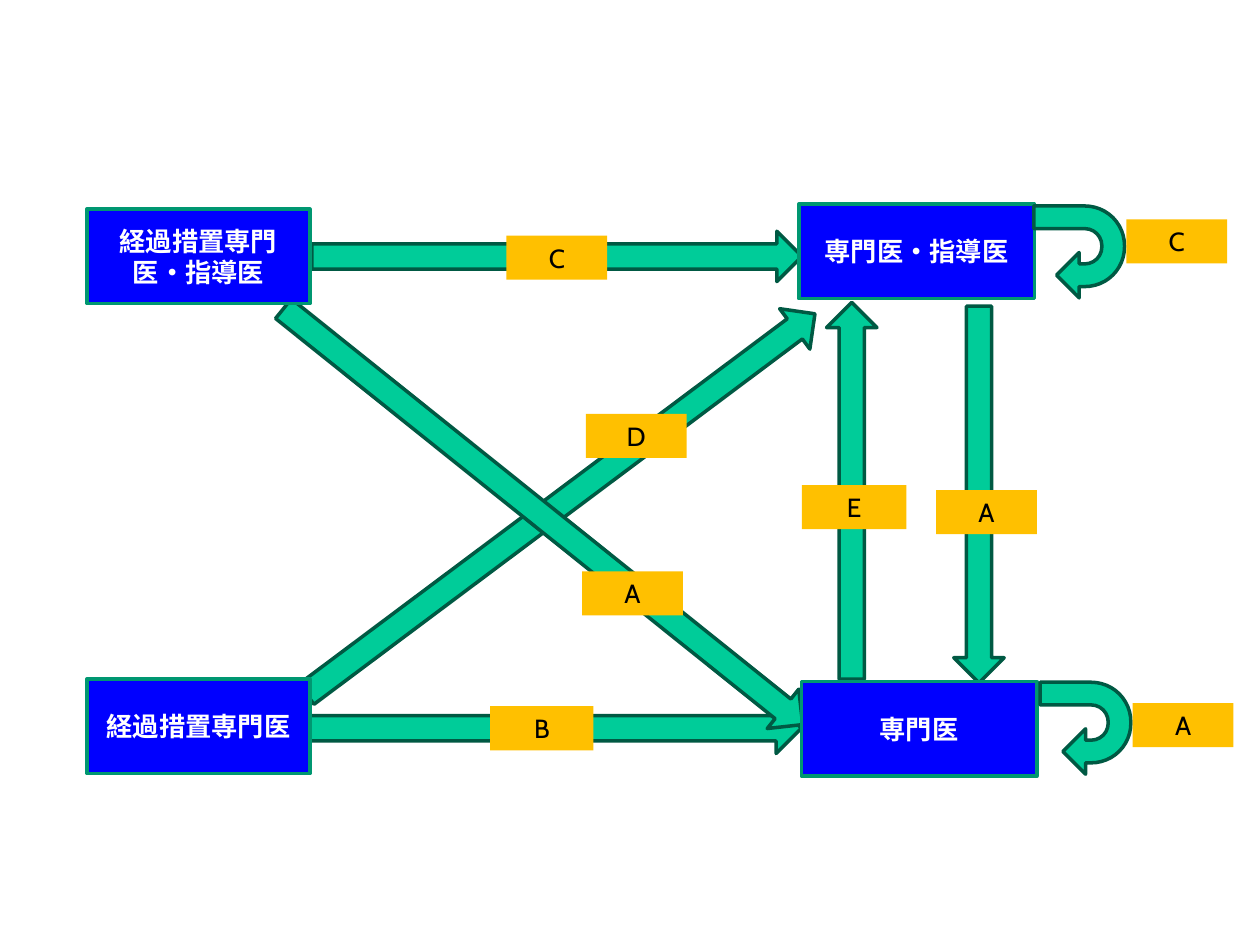
from dataclasses import dataclass
from pptx import Presentation
from pptx.dml.color import RGBColor
from pptx.enum.shapes import MSO_SHAPE
from pptx.enum.text import MSO_ANCHOR, MSO_AUTO_SIZE, PP_ALIGN
from pptx.util import Inches, Pt

RECTANGLE = MSO_SHAPE.RECTANGLE
DOWN_ARROW = MSO_SHAPE.DOWN_ARROW
U_TURN_ARROW = MSO_SHAPE.U_TURN_ARROW
MIDDLE = MSO_ANCHOR.MIDDLE
TOP = MSO_ANCHOR.TOP
CENTER = PP_ALIGN.CENTER
FIT_SHAPE = MSO_AUTO_SIZE.SHAPE_TO_FIT_TEXT


@dataclass(frozen=True)
class Theme:
    """Colours, line width and text formats of the diagram."""
    arrow_fill: RGBColor = RGBColor.from_string("00CC99")
    arrow_line: RGBColor = RGBColor.from_string("005943")
    status_fill: RGBColor = RGBColor.from_string("0000FF")
    status_line: RGBColor = RGBColor.from_string("009771")
    label_fill: RGBColor = RGBColor.from_string("FFC000")
    light_text: RGBColor = RGBColor.from_string("FFFFFF")
    dark_text: RGBColor = RGBColor.from_string("000000")
    line_width: Pt = Pt(2)
    text_size: Pt = Pt(15)
    status_font: str = "Times New Roman"
    label_font: str = "Cabin"


THEME = Theme()
LABEL_HEIGHT = 0.35

STATUSES = [
    ("経過措置専門医・指導医", (0.69, 1.66, 1.77, 0.75)),
    ("経過措置専門医", (0.69, 5.39, 1.77, 0.75)),
    ("専門医・指導医", (6.34, 1.62, 1.87, 0.75)),
    ("専門医", (6.36, 5.41, 1.87, 0.75)),
]

TRANSITIONS = [
    ("B", (4.21, 3.83, 0.4, 3.9), 270, (-0.11, 0), 0.82),
    ("D", (4.25, 1.48, 0.4, 5.04), 233.2, (0.6, -0.54), 0.8),
    ("A", (4.11, 1.46, 0.4, 5.28), 308.7, (0.71, 0.61), 0.8),
    ("C", (4.22, 0.09, 0.4, 3.89), 270, (0, 0.01), 0.8),
    ("A", (7.57, 2.43, 0.4, 2.99), 0, (0.06, 0.14), 0.8),
    ("E", (6.56, 2.4, 0.4, 2.99), 180, (0.02, 0.13), 0.83),
]

RENEWALS = [
    ("A", (8.25, 5.42, 0.73, 0.72), 0.16),
    ("C", (8.2, 1.64, 0.73, 0.72), 0.1),
]


def add_block(slide, kind, box, fill, line):
    """Add a filled, outlined preset shape in the box."""
    shape = slide.shapes.add_shape(kind, *map(Inches, box))
    shape.shadow.inherit = False
    shape.fill.solid()
    shape.fill.fore_color.rgb = fill
    shape.line.color.rgb = line
    shape.line.width = THEME.line_width
    return shape


def write_text(shape, text, anchor, color, formats):
    """Write one centred, wrapped paragraph into the shape."""
    frame = shape.text_frame
    frame.word_wrap = True
    frame.vertical_anchor = anchor
    paragraph = frame.paragraphs[0]
    paragraph.alignment = CENTER
    run = paragraph.add_run()
    run.text = text
    for name, value in formats.items():
        setattr(run.font, name, value)
    run.font.color.rgb = color


def draw_label(slide, text, box):
    """Draw the letter tag of an arrow in the box."""
    label = slide.shapes.add_textbox(*map(Inches, box))
    label.fill.solid()
    label.fill.fore_color.rgb = THEME.label_fill
    formats = {"name": THEME.label_font, "size": THEME.text_size}
    write_text(label, text, TOP, THEME.dark_text, formats)
    label.text_frame.auto_size = FIT_SHAPE


def draw_transition(slide, text, box, rotation, offset, label_width):
    """Draw an arrow in the box, with its label offset from the centre."""
    arrow = add_block(slide, DOWN_ARROW, box, THEME.arrow_fill, THEME.arrow_line)
    arrow.rotation = rotation
    left, top, width, height = box
    label_left = left + (width - label_width) / 2 + offset[0]
    label_top = top + (height - LABEL_HEIGHT) / 2 + offset[1]
    draw_label(slide, text, (label_left, label_top, label_width, LABEL_HEIGHT))


def draw_status(slide, text, box):
    """Draw a qualification status in the box."""
    status = add_block(slide, RECTANGLE, box, THEME.status_fill, THEME.status_line)
    formats = {"name": THEME.status_font, "size": THEME.text_size, "bold": True}
    write_text(status, text, MIDDLE, THEME.light_text, formats)


def draw_renewal(slide, text, box, label_drop):
    """Draw a returning arrow in the box, with its label on the right."""
    arrow = add_block(slide, U_TURN_ARROW, box, THEME.arrow_fill, THEME.arrow_line)
    arrow.rotation = 90
    left, top, width, _ = box
    draw_label(slide, text, (left + width + 0.01, top + label_drop, 0.8, LABEL_HEIGHT))


def main():
    """Build the slide of qualification transitions."""
    presentation = Presentation()
    presentation.slide_width = Inches(10)
    presentation.slide_height = Inches(7.5)
    slide = presentation.slides.add_slide(presentation.slide_layouts[6])
    for transition in TRANSITIONS:
        draw_transition(slide, *transition)
    for status in STATUSES:
        draw_status(slide, *status)
    for renewal in RENEWALS:
        draw_renewal(slide, *renewal)
    presentation.save("out.pptx")


if __name__ == "__main__":
    main()
